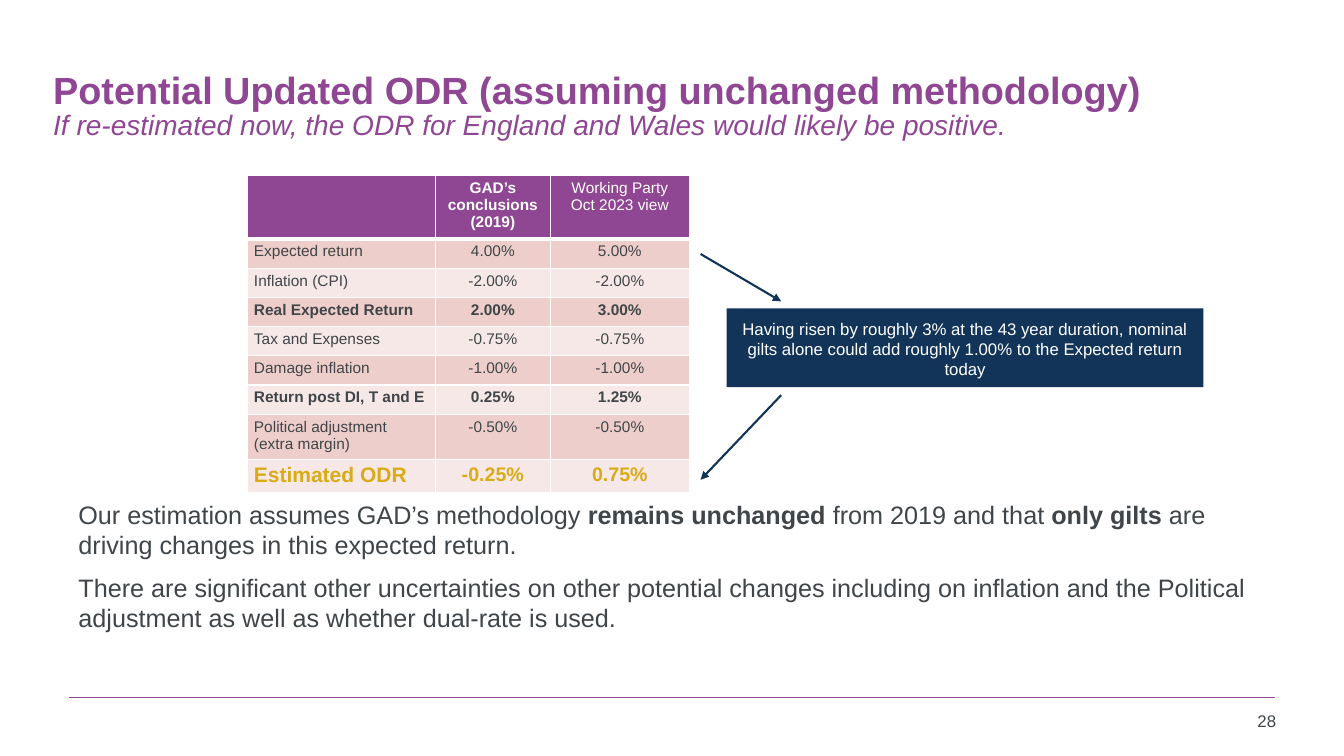
from lxml import etree
from pptx import Presentation
from pptx.dml.color import RGBColor
from pptx.enum.shapes import MSO_CONNECTOR, MSO_SHAPE
from pptx.enum.text import MSO_ANCHOR, PP_ALIGN
from pptx.oxml.ns import qn
from pptx.util import Inches, Pt

COLORS = {
    "purple": "8F4693", "navy": "113458", "text": "3F4548", "gold": "D9AB16",
    "white": "FFFFFF", "band": "EECECA", "light_band": "F6E8E6",
}
# Grid: every column and row is a tenth of an inch
GRID = 0.1
PAGE_COLUMNS, PAGE_ROWS = 133.33, 75

RETURN_ROWS = [
    ("Expected return", "4.00%", "5.00%"),
    ("Inflation (CPI)", "-2.00%", "-2.00%"),
    ("Real Expected Return", "2.00%", "3.00%"),
    ("Tax and Expenses", "-0.75%", "-0.75%"),
    ("Damage inflation", "-1.00%", "-1.00%"),
    ("Return post DI, T and E", "0.25%", "1.25%"),
    ("Political adjustment (extra margin)", "-0.50%", "-0.50%"),
    ("Estimated ODR", "-0.25%", "0.75%"),
]
SUBTOTALS = ("Real Expected Return", "Return post DI, T and E")


def units(*counts):
    return [Inches(count * GRID) for count in counts]


def color(name):
    return RGBColor.from_string(COLORS[name])


def set_values(target, values):
    for name, value in values.items():
        setattr(target, name, value)


def set_margins(target, left, top):
    across, down = Inches(left), Inches(top)
    set_values(target, {"margin_left": across, "margin_right": across,
                        "margin_top": down, "margin_bottom": down})


def write_para(para, text, size, tone, bold=False, italic=False, **layout):
    """Text between asterisks is bold."""
    set_values(para, layout)
    for index, part in enumerate(text.split("*")):
        span = para.add_run()
        span.text = part
        set_values(span.font, {"name": "Arial", "size": Pt(size), "italic": italic,
                               "bold": bold or index % 2 == 1})
        span.font.color.rgb = color(tone)


def next_para(frame, index):
    return frame.add_paragraph() if index else frame.paragraphs[0]


def add_text_box(page, box, anchor, margins):
    frame = page.shapes.add_textbox(*units(*box)).text_frame
    set_values(frame, {"word_wrap": True, "vertical_anchor": anchor})
    set_margins(frame, *margins)
    return frame


def add_line(page, start, end, tone, width, arrow=False):
    line = page.shapes.add_connector(MSO_CONNECTOR.STRAIGHT, *units(*start, *end))
    line.line.color.rgb = color(tone)
    line.line.width = Pt(width)
    if arrow:
        outline = line.line._get_or_add_ln()
        etree.SubElement(outline, qn("a:tailEnd"), type="triangle")
    etree.SubElement(line._element.spPr, qn("a:effectLst"))


def add_title(page, box):
    frame = add_text_box(page, box, MSO_ANCHOR.MIDDLE, (0.1, 0.05))
    lines = [
        ("Potential Updated ODR (assuming unchanged methodology)", 27, True),
        ("If re-estimated now, the ODR for England and Wales would likely be positive.",
         20, False),
    ]
    for index, (text, size, bold) in enumerate(lines):
        write_para(next_para(frame, index), text, size, "purple",
                   bold=bold, italic=not bold, line_spacing=0.85)


def style_cell(cell, fill, bottom_width):
    set_margins(cell, 0.07, 0.04)
    properties = cell._tc.get_or_add_tcPr()
    for side, width in (("L", 1), ("R", 1), ("T", 1), ("B", bottom_width)):
        border = etree.SubElement(properties, qn(f"a:ln{side}"), w=str(Pt(width)))
        paint = etree.SubElement(border, qn("a:solidFill"))
        etree.SubElement(paint, qn("a:srgbClr"), val=COLORS["white"])
    cell.fill.solid()
    cell.fill.fore_color.rgb = color(fill)


def add_return_table(page, box):
    widths = (18.7, 11.4, 13.8)
    heights = [6] + [2.9] * 6 + [4.5, 3.3]
    table = page.shapes.add_table(len(heights), len(widths), *units(*box)).table
    table.horz_banding = False
    for column, width in zip(table.columns, units(*widths)):
        column.width = width
    for row, height in zip(table.rows, units(*heights)):
        row.height = height

    # Header row
    headers = ([], ["GAD’s conclusions (2019)"], ["Working Party", "Oct 2023 view"])
    for column, lines in enumerate(headers):
        cell = table.cell(0, column)
        style_cell(cell, "purple", 3)
        for index, text in enumerate(lines):
            write_para(next_para(cell.text_frame, index), text, 11, "white",
                       bold=column == 1, alignment=PP_ALIGN.CENTER)

    # Banded value rows, closed by the estimate
    for row, values in enumerate(RETURN_ROWS, 1):
        final = row == len(RETURN_ROWS)
        for column, text in enumerate(values):
            cell = table.cell(row, column)
            style_cell(cell, "band" if row % 2 else "light_band", 1)
            size = (14 if column else 15) if final else 11
            write_para(cell.text_frame.paragraphs[0], text, size,
                       "gold" if final else "text",
                       bold=final or values[0] in SUBTOTALS,
                       alignment=PP_ALIGN.CENTER if column else PP_ALIGN.LEFT)


def add_callout(page, box):
    left, top, width, height = box
    note = page.shapes.add_shape(
        MSO_SHAPE.RECTANGLE, *units(left + 2.6, top + 5.4, width - 2.6, 7.8))
    note.shadow.inherit = False
    note.fill.solid()
    note.fill.fore_color.rgb = color("navy")
    note.line.fill.background()
    set_values(note.text_frame, {"word_wrap": True, "vertical_anchor": MSO_ANCHOR.TOP})
    set_margins(note.text_frame, 0.1, 0.1)
    write_para(note.text_frame.paragraphs[0],
               "Having risen by roughly 3% at the 43 year duration, nominal gilts alone "
               "could add roughly 1.00% to the Expected return today",
               12, "white", alignment=PP_ALIGN.CENTER)

    # Arrows from the table to the note and back
    add_line(page, (left, top), (left + 8, top + 4.7), "navy", 1.5, arrow=True)
    add_line(page, (left + 8, top + 14), (left, top + height), "navy", 1.5, arrow=True)


def add_commentary(page, box):
    frame = add_text_box(page, box, MSO_ANCHOR.TOP, (0.1, 0.05))
    paragraphs = [
        "Our estimation assumes GAD’s methodology *remains unchanged* from 2019 and "
        "that *only gilts* are driving changes in this expected return.",
        "There are significant other uncertainties on other potential changes including "
        "on inflation and the Political adjustment as well as whether dual-rate is used.",
    ]
    for index, text in enumerate(paragraphs):
        write_para(next_para(frame, index), text, 18, "text",
                   space_before=Pt(9 if index else 0))


def add_footer(page, box):
    left, top, width, height = box
    add_line(page, (left, top), (left + width, top), "purple", 1)
    number_box = (left + width - 37.2, top + height - 1.5, 37.3, 1.5)
    frame = add_text_box(page, number_box, MSO_ANCHOR.BOTTOM, (0, 0))
    write_para(frame.paragraphs[0], "28", 12, "text", alignment=PP_ALIGN.RIGHT)


def main():
    deck = Presentation()
    deck.slide_width, deck.slide_height = units(PAGE_COLUMNS, PAGE_ROWS)
    page = deck.slides.add_slide(deck.slide_layouts[6])
    add_footer(page, (6.8, 69.2, 119.7, 3.3))
    add_commentary(page, (6.8, 49, 120, 14))
    add_return_table(page, (24.5, 17.4, 43.9, 31.2))
    add_callout(page, (69.5, 25.2, 49.9, 22.4))
    add_title(page, (4.3, 4.4, 125, 12.5))
    deck.save("out.pptx")


if __name__ == "__main__":
    main()
